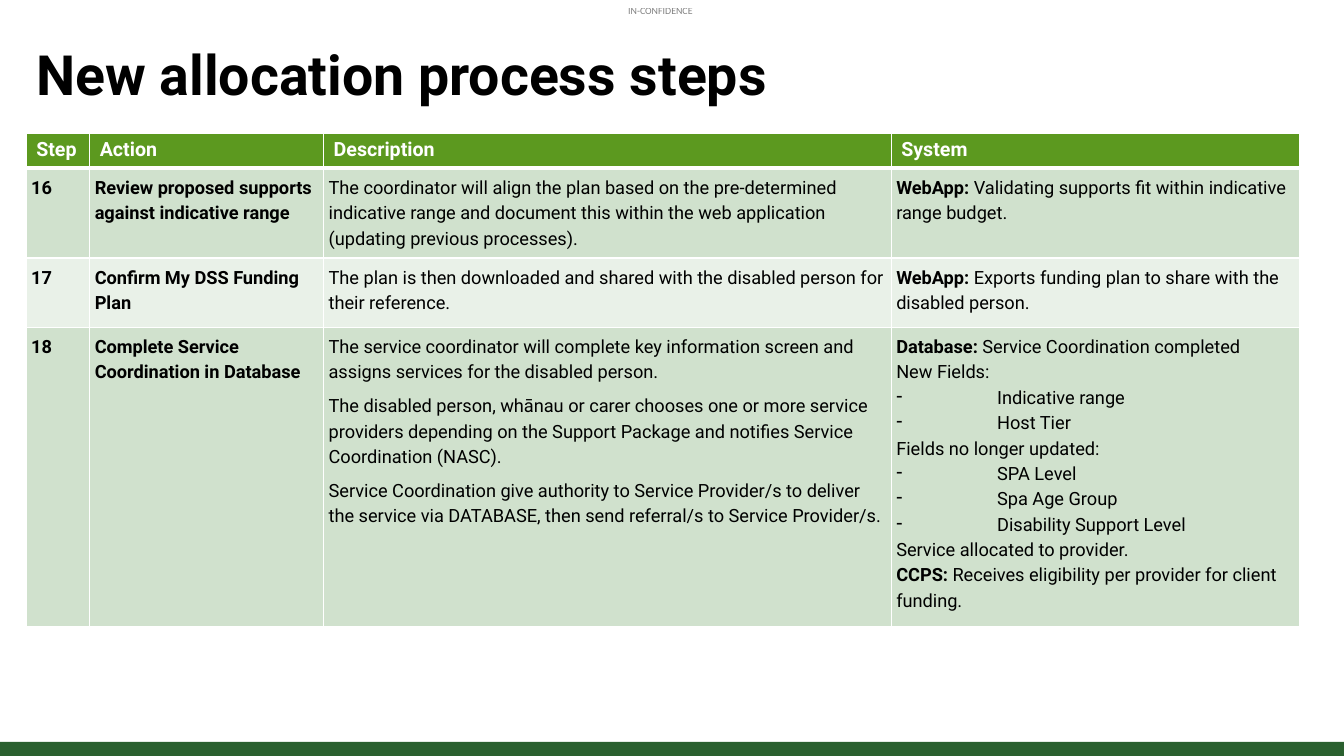
from dataclasses import dataclass

from lxml import etree
from pptx import Presentation
from pptx.dml.color import RGBColor
from pptx.enum.shapes import MSO_SHAPE
from pptx.enum.text import MSO_ANCHOR
from pptx.oxml.ns import qn
from pptx.util import Inches, Pt

RECTANGLE = MSO_SHAPE.RECTANGLE
MIDDLE = MSO_ANCHOR.MIDDLE


@dataclass(frozen=True)
class Theme:
    font: str = "Roboto"
    marking_font: str = "Calibri"
    black: str = "000000"
    white: str = "FFFFFF"
    header: str = "5C991F"
    bands: tuple[str, ...] = ("D0E1CD", "E9F1E8")
    footer: str = "2A602F"
    title_size: float = 39.6
    header_size: float = 14
    body_size: float = 13
    marking_size: float = 7.1


@dataclass(frozen=True)
class Line:
    text: str
    lead: str = ""
    bullet: bool = False


@dataclass(frozen=True)
class Step:
    number: str
    action: str
    description: tuple[Line, ...]
    system: tuple[Line, ...]


THEME = Theme()
HEADINGS = ("Step", "Action", "Description", "System")
COLUMN_WIDTHS = (0.63, 2.32, 5.63, 4.05)
ROW_HEIGHTS = (0.35, 0.89, 0.69, 2.87)
STEPS = (
    Step(
        "16",
        "Review proposed supports against indicative range",
        (Line("The coordinator will align the plan based on the pre-determined indicative range "
              "and document this within the web application (updating previous processes)."),),
        (Line("Validating supports fit within indicative range budget.", "WebApp: "),),
    ),
    Step(
        "17",
        "Confirm My DSS Funding Plan",
        (Line("The plan is then downloaded and shared with the disabled person for their reference."),),
        (Line("Exports funding plan to share with the disabled person.", "WebApp: "),),
    ),
    Step(
        "18",
        "Complete Service Coordination in Database",
        (
            Line("The service coordinator will complete key information screen and assigns services "
                 "for the disabled person."),
            Line("The disabled person, whānau or carer chooses one or more service providers depending "
                 "on the Support Package and notifies Service Coordination (NASC)."),
            Line("Service Coordination give authority to Service Provider/s to deliver the service "
                 "via DATABASE, then send referral/s to Service Provider/s."),
        ),
        (
            Line("Service Coordination completed", "Database: "),
            Line("New Fields:"),
            Line("Indicative range", bullet=True),
            Line("Host Tier", bullet=True),
            Line("Fields no longer updated:"),
            Line("SPA Level", bullet=True),
            Line("Spa Age Group", bullet=True),
            Line("Disability Support Level", bullet=True),
            Line("Service allocated to provider."),
            Line("Receives eligibility per provider for client funding.", "CCPS: "),
        ),
    ),
)


def style_font(font, size: float, color: str, bold: bool | None, name: str = THEME.font) -> None:
    font.name = name
    font.size = Pt(size)
    font.bold = bold
    font.color.rgb = RGBColor.from_string(color)


def add_label(page, left: float, top: float, width: float, height: float, text: str):
    frame = page.shapes.add_textbox(Inches(left), Inches(top), Inches(width), Inches(height)).text_frame
    frame.word_wrap = True
    frame.text = text
    return frame


def add_marking(page) -> None:
    frame = add_label(page, 6.23, 0.05, 0.89, 0.12, "IN-CONFIDENCE")
    frame.word_wrap = False
    frame.margin_left = frame.margin_top = frame.margin_right = frame.margin_bottom = 0
    para = frame.paragraphs[0]
    style_font(para.font, THEME.marking_size, THEME.black, False, THEME.marking_font)
    for color in para._p.iter(qn("a:srgbClr")):
        etree.SubElement(color, qn("a:alpha"), val="50000")


def add_title(page) -> None:
    frame = add_label(page, 0.26, 0.41, 12.82, 0.71, "New allocation process steps")
    frame.vertical_anchor = MIDDLE
    para = frame.paragraphs[0]
    para.line_spacing = 0.9
    style_font(para.font, THEME.title_size, THEME.black, True)


def add_footer(page) -> None:
    bar = page.shapes.add_shape(RECTANGLE, 0, Inches(7.36), Inches(13.33), Inches(0.14))
    bar.shadow.inherit = False
    bar.fill.solid()
    bar.fill.fore_color.rgb = RGBColor.from_string(THEME.footer)
    bar.line.fill.background()


def paint_cell(cell, fill: str, top: float = 1, bottom: float = 1) -> None:
    properties = cell._tc.get_or_add_tcPr()
    for side, width in (("L", 1), ("R", 1), ("T", top), ("B", bottom)):
        border = etree.SubElement(properties, qn(f"a:ln{side}"), w=str(Pt(width)))
        solid = etree.SubElement(border, qn("a:solidFill"))
        etree.SubElement(solid, qn("a:srgbClr"), val=THEME.white)
    cell.fill.solid()
    cell.fill.fore_color.rgb = RGBColor.from_string(fill)


def add_dash(para) -> None:
    properties = para._p.get_or_add_pPr()
    properties.set("marL", str(Inches(1)))
    properties.set("indent", str(-Inches(1)))
    etree.SubElement(properties, qn("a:buChar"), char="-")


def write_cell(cell, lines: tuple[Line, ...], bold: bool, space_after: float) -> None:
    cell.margin_left = cell.margin_right = cell.margin_top = cell.margin_bottom = Inches(0.05)
    frame = cell.text_frame
    for index, line in enumerate(lines):
        para = frame.add_paragraph() if index else frame.paragraphs[0]
        para.line_spacing = 1.2
        para.space_after = Pt(space_after)
        if line.bullet:
            add_dash(para)
        style_font(para.font, THEME.body_size, THEME.black, None if line.lead else bold)
        if line.lead:
            lead = para.add_run()
            lead.text = line.lead
            lead.font.bold = True
        span = para.add_run()
        span.text = line.text
        if line.lead:
            span.font.bold = bold


def add_steps_table(page) -> None:
    table = page.shapes.add_table(
        len(STEPS) + 1, len(HEADINGS), Inches(0.26), Inches(1.32),
        Inches(sum(COLUMN_WIDTHS)), Inches(sum(ROW_HEIGHTS)),
    ).table
    table.horz_banding = False
    for column, width in zip(table.columns, COLUMN_WIDTHS):
        column.width = Inches(width)
    for row, height in zip(table.rows, ROW_HEIGHTS):
        row.height = Inches(height)
    for column, heading in enumerate(HEADINGS):
        cell = table.cell(0, column)
        paint_cell(cell, THEME.header, bottom=3)
        cell.text = heading
        style_font(cell.text_frame.paragraphs[0].font, THEME.header_size, THEME.white, True)
    for row, step in enumerate(STEPS, start=1):
        contents = ((Line(step.number),), (Line(step.action),), step.description, step.system)
        for column, lines in enumerate(contents):
            cell = table.cell(row, column)
            paint_cell(cell, THEME.bands[(row - 1) % 2], top=3 if row == 1 else 1)
            tight = column == 3 and len(lines) > 1
            write_cell(cell, lines, bold=column < 2, space_after=0 if tight else 6)


def main() -> None:
    deck = Presentation()
    deck.slide_width = Inches(13.33)
    deck.slide_height = Inches(7.5)
    page = deck.slides.add_slide(deck.slide_layouts[6])
    add_marking(page)
    add_footer(page)
    add_title(page)
    add_steps_table(page)
    deck.save("out.pptx")


if __name__ == "__main__":
    main()
